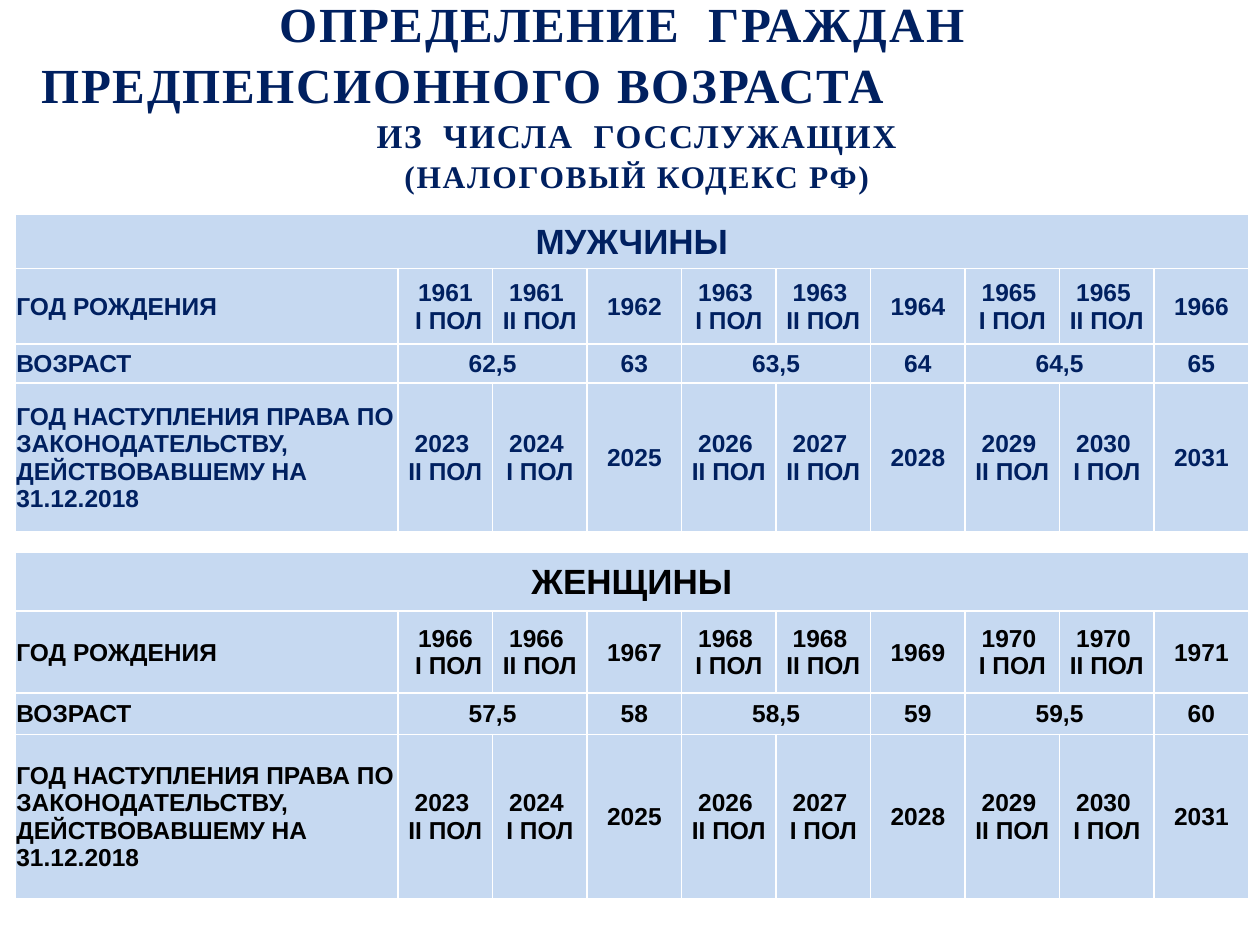
from copy import deepcopy
from dataclasses import dataclass

from lxml.etree import SubElement
from pptx import Presentation
from pptx.dml.color import RGBColor as Color
from pptx.enum.text import MSO_ANCHOR as Anchor, MSO_AUTO_SIZE as AutoSize, PP_ALIGN as Align
from pptx.oxml.ns import qn
from pptx.util import Inches, Pt


@dataclass(frozen=True)
class Theme:
    navy: Color = Color.from_string("002060")
    black: Color = Color.from_string("000000")
    cell_fill: Color = Color.from_string("C6D9F1")
    border: str = "FFFFFF"
    border_width: int = Pt(1)
    title_font: str = "Times New Roman"
    table_font: str = "Arial"
    title_size: int = 28
    subtitle_size: int = 19
    note_size: int = 18
    heading_size: int = 20
    cell_size: int = 14


THEME = Theme()
LABEL_WIDTH, YEAR_WIDTH, YEAR_COUNT = 3.04, 0.75, 9
TABLE_LEFT, TABLE_WIDTH = 0.12, 9.76
ROW_LABELS = (
    "ГОД РОЖДЕНИЯ",
    "ВОЗРАСТ",
    "ГОД НАСТУПЛЕНИЯ ПРАВА ПО ЗАКОНОДАТЕЛЬСТВУ, ДЕЙСТВОВАВШЕМУ НА 31.12.2018",
)
FIRST, SECOND = " \nI ПОЛ", " \nII ПОЛ"


def apply_format(target, values):
    for name, value in values.items():
        setattr(target, name, value)


def birth_years(first_year):
    """Two half-years for every odd step, one whole year for every even one."""
    years = [f"{first_year}\n I ПОЛ", f"{first_year}{SECOND}", f"{first_year + 1}"]
    for year in (first_year + 2, first_year + 4):
        years += [f"{year}{FIRST}", f"{year}{SECOND}", f"{year + 1}"]
    return years


def ages(first_age):
    """Half-year ages span two columns; None marks the covered column."""
    row = []
    for age in range(first_age, first_age + 3):
        row += [f"{age},5", None, f"{age + 1}"]
    return row


def entitlement_years(half_in_2027):
    return [
        f"2023{SECOND}", f"2024{FIRST}", "2025",
        f"2026{SECOND}", f"2027{half_in_2027}", "2028",
        f"2029{SECOND}", f"2030{FIRST}", "2031",
    ]


class SlideBuilder:
    def __init__(self, presentation, theme):
        self.theme = theme
        self.slide = presentation.slides.add_slide(presentation.slide_layouts[5])

    def style_run(self, run, size, color, font):
        apply_format(run.font, {"size": Pt(size), "bold": True, "name": font})
        run.font.color.rgb = color

    def title(self, lines):
        """Each line is (text, size, left indent); an indent means left alignment."""
        shape = self.slide.shapes.title
        apply_format(shape, {"left": 0, "top": 0,
                             "width": Inches(9.88), "height": Inches(1.47)})
        frame = shape.text_frame
        apply_format(frame, {"word_wrap": True, "auto_size": AutoSize.NONE,
                             "vertical_anchor": Anchor.MIDDLE})
        for index, (text, size, indent) in enumerate(lines):
            paragraph = frame.add_paragraph() if index else frame.paragraphs[0]
            apply_format(paragraph, {"line_spacing": 1.05,
                                     "alignment": Align.LEFT if indent else Align.CENTER})
            if indent:
                paragraph_properties = paragraph._p.get_or_add_pPr()
                paragraph_properties.set("marL", str(Inches(indent)))
                paragraph_properties.set("indent", "0")
            run = paragraph.add_run()
            run.text = text
            self.style_run(run, size, self.theme.navy, self.theme.title_font)
            run.font._element.set("spc", "100")

    def borders(self, cell):
        properties = cell._tc.get_or_add_tcPr()
        for side in ("lnL", "lnR", "lnT", "lnB"):
            line = SubElement(properties, qn(f"a:{side}"), w=str(self.theme.border_width))
            fill = SubElement(line, qn("a:solidFill"))
            SubElement(fill, qn("a:srgbClr"), val=self.theme.border)

    def cell(self, cell, text, size, color, alignment):
        apply_format(cell, {"margin_left": Inches(0.01), "margin_right": Inches(0.01),
                            "margin_top": Inches(0.01), "margin_bottom": 0,
                            "vertical_anchor": Anchor.MIDDLE})
        self.borders(cell)
        cell.fill.solid()
        cell.fill.fore_color.rgb = self.theme.cell_fill
        if not text:
            return
        paragraph = cell.text_frame.paragraphs[0]
        paragraph.text = text.replace("\n", "\v")
        paragraph.alignment = alignment
        for run in paragraph.runs:
            self.style_run(run, size, color, self.theme.table_font)
        for line_break in paragraph._p.findall(qn("a:br")):
            line_break.insert(0, deepcopy(paragraph.runs[0].font._element))

    def table(self, heading, rows, top, row_heights, color):
        frame = self.slide.shapes.add_table(
            len(row_heights), YEAR_COUNT + 1, Inches(TABLE_LEFT), Inches(top),
            Inches(TABLE_WIDTH), Inches(sum(row_heights)))
        table = frame.table
        apply_format(table, {"first_row": False, "horz_banding": False})
        for column, width in zip(table.columns, [LABEL_WIDTH] + [YEAR_WIDTH] * YEAR_COUNT):
            column.width = Inches(width)
        for row, height in zip(table.rows, row_heights):
            row.height = Inches(height)

        grid = [[heading] + [None] * YEAR_COUNT]
        grid += [[label] + values for label, values in zip(ROW_LABELS, rows)]
        for row_index, values in enumerate(grid):
            size = self.theme.cell_size if row_index else self.theme.heading_size
            for column_index, text in enumerate(values):
                is_label = row_index and not column_index
                self.cell(table.cell(row_index, column_index), text, size, color,
                          Align.LEFT if is_label else Align.CENTER)
        table.cell(0, 0).merge(table.cell(0, YEAR_COUNT))
        for column_index in range(1, YEAR_COUNT, 3):
            table.cell(2, column_index).merge(table.cell(2, column_index + 1))


def main():
    presentation = Presentation()
    apply_format(presentation, {"slide_width": Inches(10), "slide_height": Inches(7.5)})
    builder = SlideBuilder(presentation, THEME)
    builder.table("МУЖЧИНЫ", [birth_years(1961), ages(62), entitlement_years(SECOND)],
                  1.7, (0.43, 0.6, 0.31, 1.18), THEME.navy)
    builder.title([
        ("ОПРЕДЕЛЕНИЕ  ГРАЖДАН", THEME.title_size, 0),
        ("ПРЕДПЕНСИОННОГО ВОЗРАСТА", THEME.title_size, 0.23),
        ("ИЗ  ЧИСЛА  ГОССЛУЖАЩИХ", THEME.subtitle_size, 0),
        ("(НАЛОГОВЫЙ КОДЕКС РФ)", THEME.note_size, 0),
    ])
    builder.table("ЖЕНЩИНЫ", [birth_years(1966), ages(57), entitlement_years(FIRST)],
                  4.38, (0.47, 0.65, 0.33, 1.3), THEME.black)
    presentation.save("out.pptx")


if __name__ == "__main__":
    main()
